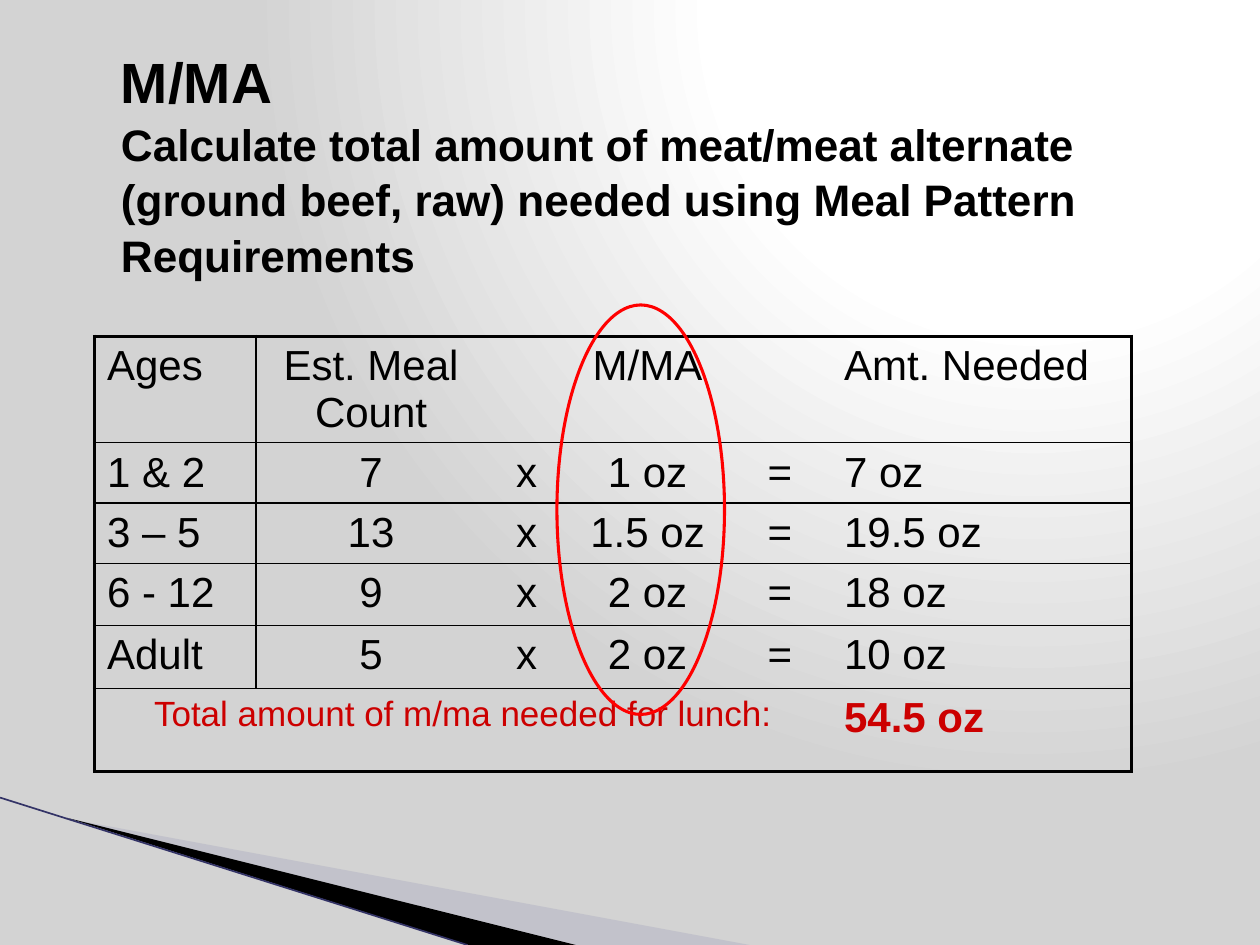
from lxml.etree import SubElement
from pptx import Presentation
from pptx.dml.color import RGBColor
from pptx.enum.shapes import MSO_CONNECTOR as Line, MSO_SHAPE as Shape
from pptx.enum.text import MSO_ANCHOR as Anchor, MSO_AUTO_SIZE as Fit, PP_ALIGN as Align
from pptx.oxml import parse_xml
from pptx.oxml.ns import nsdecls, qn
from pptx.util import Inches, Pt

THEME = {
    "font": "Arial", "ink": "000000", "total": "CC0000", "ring": "FF0000",
    "light": "FFFFFF", "shade": "D3D3D3", "wedge": "AAAABF", "edge": "333366",
    "head": 32.4, "sub": 25.2, "body": 24, "note": 20,
    "thick": 2.25, "thin": 1,
}
TITLE = "M/MA"
TASK = ("Calculate total amount of meat/meat alternate (ground beef, raw) "
        "needed using Meal Pattern Requirements")
HEADS = ["Ages", "Est. Meal Count", "", "M/MA", "", "Amt. Needed"]
MEALS = [
    ("1 & 2", "7", "1 oz", "7 oz"),
    ("3 – 5", "13", "1.5 oz", "19.5 oz"),
    ("6 - 12", "9", "2 oz", "18 oz"),
    ("Adult", "5", "2 oz", "10 oz"),
]
TOTAL = ("Total amount of m/ma needed for lunch:", "54.5 oz")
COLS = [1.28, 1.83, 0.64, 1.28, 0.82, 2.38]
ROWS = [0.84, 0.48, 0.48, 0.49, 0.5, 0.66]
PALE = [(0.55, 6.5), (5.95, 7.5), (4.56, 7.5)]
DARK = [(0.53, 6.49), (4.57, 7.5), (3.72, 7.5)]


def color(name):
    return RGBColor.from_string(THEME[name])


def write(para, text, size="body", ink="ink", bold=False, align=Align.LEFT):
    para.alignment = align
    run = para.add_run()
    run.text = text
    font = run.font
    font.name, font.size, font.bold = THEME["font"], Pt(THEME[size]), bold
    font.color.rgb = color(ink)


def paint_back(slide):
    """Radial gradient that is brightest at the top right."""
    slide.background.fill.solid()
    props = slide.element.find(".//" + qn("p:bgPr"))
    stops = "".join(
        f'<a:gs pos="{pos}000"><a:srgbClr val="{THEME[name]}"/></a:gs>'
        for pos, name in [(0, "light"), (40, "light"), (100, "shade")])
    grad = parse_xml(
        f'<a:gradFill {nsdecls("a")} rotWithShape="1"><a:gsLst>{stops}</a:gsLst>'
        '<a:path path="circle"><a:fillToRect l="65000" b="98000"/></a:path>'
        '</a:gradFill>')
    props.replace(props.find(qn("a:solidFill")), grad)


def add_wedge(slide, points, name, alpha=100):
    first, *rest = [(Inches(x), Inches(y)) for x, y in points]
    form = slide.shapes.build_freeform(*first)
    form.add_line_segments(rest)
    wedge = form.convert_to_shape()
    wedge.shadow.inherit = False
    wedge.fill.solid()
    wedge.fill.fore_color.rgb = color(name)
    wedge.line.fill.background()
    if alpha < 100:
        tint = wedge.element.spPr.find(".//" + qn("a:srgbClr"))
        SubElement(tint, qn("a:alpha"), val=str(alpha * 1000))


def add_edge(slide):
    edge = slide.shapes.add_connector(
        Line.STRAIGHT, Inches(0), Inches(6.33), Inches(3.71), Inches(7.5))
    edge.line.color.rgb = color("edge")
    edge.line.width = Pt(0.95)
    SubElement(edge.element.spPr, qn("a:effectLst"))


def fill_title(slide):
    title = slide.shapes.title
    title.left, title.top = Inches(0.5), Inches(0.3)
    title.width, title.height = Inches(9.08), Inches(1.62)
    frame = title.text_frame
    frame.word_wrap, frame.auto_size = True, Fit.NONE
    frame.vertical_anchor = Anchor.TOP
    frame.margin_left, frame.margin_top = Inches(0.46), Inches(0.07)
    head, task = frame.paragraphs[0], frame.add_paragraph()
    head.space_before = task.space_before = Pt(0)
    head.line_spacing, task.line_spacing = 1.0, 1.05
    write(head, TITLE, size="head", bold=True)
    write(task, TASK, size="sub", bold=True)


def set_borders(cell, row, col):
    """Thick frame, thin row rules, one thin rule after the ages."""
    last, end = len(ROWS) - 1, len(COLS) - 1
    thick, thin = THEME["thick"], THEME["thin"]
    inner = thin if row < last else 0
    sides = {
        "L": thick if col == 0 else inner if col == 1 else 0,
        "R": thick if col == end else inner if col == 0 else 0,
        "T": thick if row == 0 else thin,
        "B": thick if row == last else thin,
    }
    props = cell._tc.get_or_add_tcPr()
    for side, width in sides.items():
        rule = SubElement(props, qn(f"a:ln{side}"), w=str(Pt(width)))
        if width:
            paint = SubElement(rule, qn("a:solidFill"))
            SubElement(paint, qn("a:srgbClr"), val=THEME["ink"])
        else:
            SubElement(rule, qn("a:noFill"))


def add_grid(slide):
    grid = slide.shapes.add_table(
        len(ROWS), len(COLS), Inches(0.75), Inches(2.67),
        Inches(sum(COLS)), Inches(sum(ROWS))).table
    grid.first_row = grid.horz_banding = False
    for col, width in zip(grid.columns, COLS):
        col.width = Inches(width)
    for row, height in zip(grid.rows, ROWS):
        row.height = Inches(height)

    meals = [(age, count, "x", size, "=", need) for age, count, size, need in MEALS]
    note, amount = TOTAL
    texts = [HEADS, *meals, [note, "", "", "", "", amount]]
    last, end = len(ROWS) - 1, len(COLS) - 1
    for r, line in enumerate(texts):
        for c, text in enumerate(line):
            cell = grid.cell(r, c)
            set_borders(cell, r, c)
            cell.fill.background()
            style = {"align": Align.LEFT if c in (0, end) else Align.CENTER}
            if r == last:
                style["ink"] = "total"
                style.update({"bold": True} if c == end
                             else {"size": "note", "align": Align.CENTER})
            if text:
                write(cell.text_frame.paragraphs[0], text, **style)
    grid.cell(last, 0).merge(grid.cell(last, end - 1))


def add_ring(slide):
    ring = slide.shapes.add_shape(
        Shape.OVAL, Inches(3.46), Inches(3.38), Inches(3.25), Inches(1.33))
    ring.rotation = 90
    ring.shadow.inherit = False
    ring.fill.background()
    ring.line.color.rgb = color("ring")
    ring.line.width = Pt(1.75)


def main():
    deck = Presentation()
    deck.slide_width, deck.slide_height = Inches(10), Inches(7.5)
    slide = deck.slides.add_slide(deck.slide_layouts[5])
    paint_back(slide)
    add_wedge(slide, PALE, "wedge", alpha=40)
    add_wedge(slide, DARK, "ink")
    add_edge(slide)
    fill_title(slide)
    add_grid(slide)
    add_ring(slide)
    deck.save("out.pptx")


if __name__ == "__main__":
    main()
